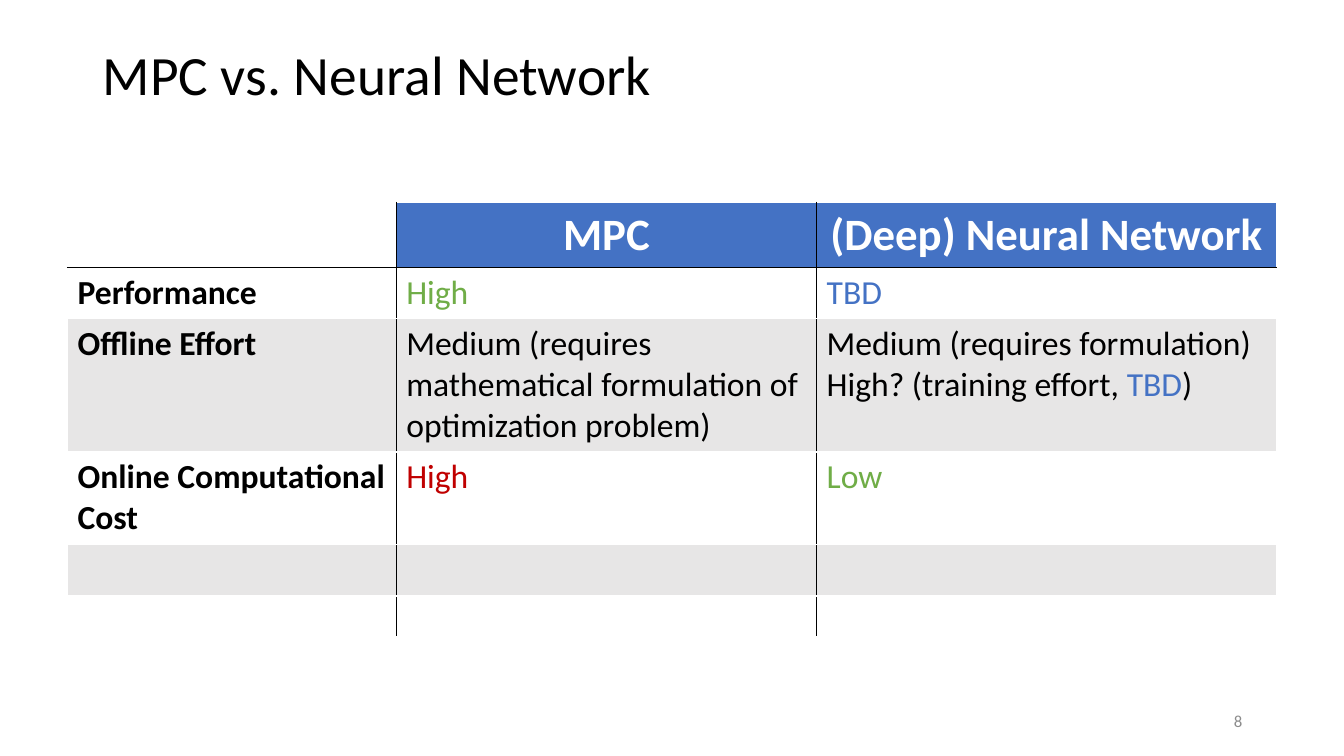
from lxml.etree import SubElement
from pptx import Presentation
from pptx.dml.color import RGBColor
from pptx.enum.text import MSO_ANCHOR, MSO_AUTO_SIZE, PP_ALIGN
from pptx.oxml.ns import qn
from pptx.util import Inches, Pt

COLORS = {
    "black": "000000", "white": "FFFFFF", "blue": "4472C4", "green": "70AD47",
    "red": "C00000", "band": "E7E6E6", "number": "8C8C8C",
}
COL_WIDTHS = [3.26, 4.17, 4.56]
ROW_HEIGHTS = [0.64, 0.51, 1.31, 0.92, 0.51, 0.4]

# Each cell is a list of paragraphs, each paragraph a list of (text, color) runs.
HEADER = [[], [[("MPC", "white")]], [[("(Deep) Neural Network", "white")]]]
BODY = [
    [[[("Performance", "black")]], [[("High", "green")]], [[("TBD", "blue")]]],
    [
        [[("Offline Effort", "black")]],
        [[("Medium (requires mathematical formulation of optimization problem)", "black")]],
        [
            [("Medium (requires formulation)", "black")],
            [("High? (training effort, ", "black"), ("TBD", "blue"), (")", "black")],
        ],
    ],
    [[[("Online Computational Cost", "black")]], [[("High", "red")]], [[("Low", "green")]]],
    [[], [], []],
    [[], [], []],
]


class SlideBuilder:
    def __init__(self, prs, font):
        self.font = font
        self.slide = prs.slides.add_slide(prs.slide_layouts[5])

    def add_text(self, tf, paragraphs, size, bold=False, **paragraph_format):
        for i, runs in enumerate(paragraphs):
            p = tf.add_paragraph() if i else tf.paragraphs[0]
            for name, value in paragraph_format.items():
                setattr(p, name, value)
            for text, color in runs:
                r = p.add_run()
                r.text = text
                for name, value in {"name": self.font, "size": Pt(size), "bold": bold}.items():
                    setattr(r.font, name, value)
                r.font.color.rgb = RGBColor.from_string(COLORS[color])

    def place(self, sp, left, top, width, height):
        box = {"left": left, "top": top, "width": width, "height": height}
        for name, value in box.items():
            setattr(sp, name, Inches(value))
        frame = {"word_wrap": True, "auto_size": MSO_AUTO_SIZE.NONE,
                 "vertical_anchor": MSO_ANCHOR.MIDDLE}
        for name, value in frame.items():
            setattr(sp.text_frame, name, value)
        return sp.text_frame

    def title(self, text, *box):
        tf = self.place(self.slide.shapes.title, *box)
        self.add_text(tf, [[(text, "black")]], 39.6, alignment=PP_ALIGN.LEFT, line_spacing=0.9)

    def slide_number(self, text, *box):
        sp = self.slide.shapes.add_textbox(0, 0, 0, 0)
        tf = self.place(sp, *box)
        self.add_text(tf, [[(text, "number")]], 12, alignment=PP_ALIGN.RIGHT)

    def borders(self, cell, **sides):
        """Draw 1 pt cell borders; sides must come in the order L, R, T, B."""
        tc_pr = cell._tc.get_or_add_tcPr()
        for side, color in sides.items():
            ln = SubElement(tc_pr, qn(f"a:ln{side}"), w=str(Pt(1)))
            fill = SubElement(ln, qn("a:solidFill"))
            SubElement(fill, qn("a:srgbClr"), val=COLORS[color])

    def table(self, rows, left, top):
        shape = self.slide.shapes.add_table(
            len(rows), len(COL_WIDTHS), Inches(left), Inches(top),
            Inches(sum(COL_WIDTHS)), Inches(sum(ROW_HEIGHTS)))
        table = shape.table
        for column, width in zip(table.columns, COL_WIDTHS):
            column.width = Inches(width)
        for row, height in zip(table.rows, ROW_HEIGHTS):
            row.height = Inches(height)
        last = len(COL_WIDTHS) - 1
        for i, row in enumerate(rows):
            for j, paragraphs in enumerate(row):
                cell = table.cell(i, j)
                self.borders(
                    cell,
                    L="black" if j else "white",
                    R="black" if j < last else "white",
                    T="black" if i == 1 else "white",
                    B="black" if i == 0 else "white")
                if i == 0:
                    fill = "blue" if j else "white"
                else:
                    fill = "white" if i % 2 else "band"
                cell.fill.solid()
                cell.fill.fore_color.rgb = RGBColor.from_string(COLORS[fill])
                self.add_text(
                    cell.text_frame, paragraphs, 24 if i else 32, bold=i == 0 or j == 0,
                    alignment=PP_ALIGN.LEFT if i else PP_ALIGN.CENTER)


def main():
    prs = Presentation()
    prs.slide_width, prs.slide_height = Inches(13.33), Inches(7.5)
    builder = SlideBuilder(prs, "Calibri")
    builder.title("MPC vs. Neural Network", 0.92, 0.4, 11.5, 0.74)
    builder.table([HEADER, *BODY], 0.67, 2.01)
    builder.slide_number("8", 9.42, 6.95, 3, 0.4)
    prs.save("out.pptx")


if __name__ == "__main__":
    main()
